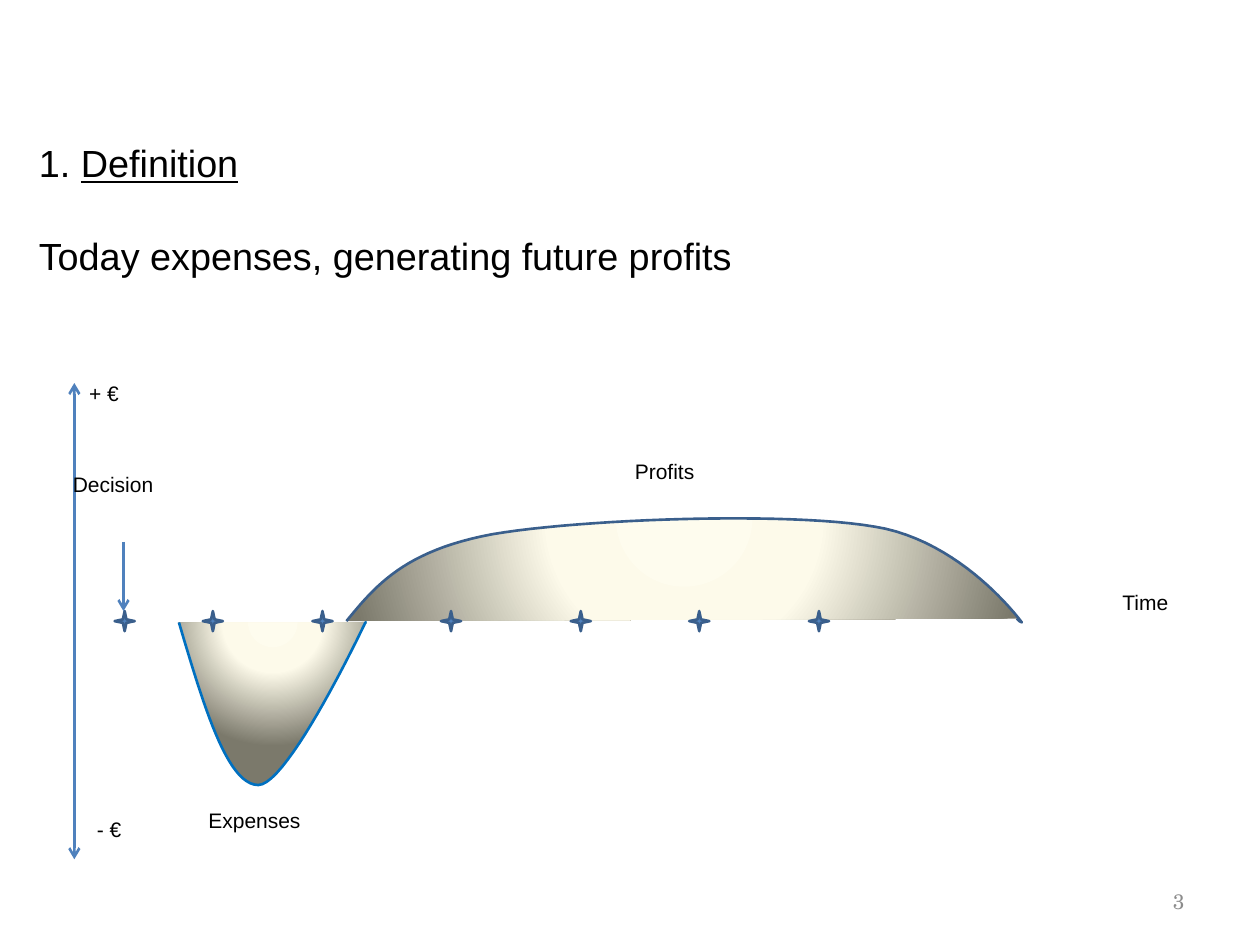
from dataclasses import dataclass

from pptx import Presentation, oxml
from pptx import util as u
from pptx.dml.color import RGBColor
from pptx.enum import shapes, text
from pptx.oxml.ns import nsdecls, qn

Point = tuple[float, float]


@dataclass(frozen=True)
class Theme:
    font: str = "Arial"
    number_font: str = "TeX Gyre Schola"
    ink: str = "000000"
    muted: str = "8C8C8C"
    accent: str = "4F81BD"
    edge: str = "3A5F8C"
    expense_edge: str = "0070C0"
    gradient: tuple = ((0, "FEFCEE"), (40, "FDFAEA"), (100, "7B796B"))
    title_size: float = 21.6
    label_size: float = 12
    line_width: float = 1.5


@dataclass(frozen=True)
class Label:
    words: str
    left: float
    top: float
    width: float
    align: text.PP_ALIGN = text.PP_ALIGN.LEFT


@dataclass(frozen=True)
class Area:
    start: Point
    curves: tuple
    tail: tuple
    edge: str


THEME = Theme()
TIMELINE_Y = 4.93
STAR_SIZE = 0.16
STAR_CENTERS = (0.99, 1.69, 2.56, 3.58, 4.61, 5.55, 6.5)
CURVE_STEPS = 24

LABELS = (
    Label("Time", 8.81, 4.63, 0.57),
    Label("Decision", 0.48, 3.69, 0.84),
    Label("+ €", 0.61, 2.97, 0.44),
    Label("- €", 0.67, 6.43, 0.4),
    Label("Expenses", 1.55, 6.36, 0.94, text.PP_ALIGN.CENTER),
    Label("Profits", 4.94, 3.59, 0.68),
)

EXPENSES = Area(
    (1.42, 4.94),
    (
        ((1.61, 5.58), (1.8, 6.23), (2.05, 6.23)),
        ((2.29, 6.23), (2.9, 4.94), (2.9, 4.94)),
    ),
    ((2.91, 4.94),),
    THEME.expense_edge,
)
PROFITS = Area(
    (2.75, 4.93),
    (
        ((2.98, 4.65), (3.21, 4.37), (3.91, 4.24)),
        ((4.61, 4.12), (6.24, 4.06), (6.94, 4.18)),
        ((7.64, 4.29), (8.11, 4.94), (8.11, 4.94)),
    ),
    ((8.09, 4.93), (8.07, 4.91)),
    THEME.edge,
)


def style_font(font, size: float, color: str = THEME.ink, name: str = THEME.font) -> None:
    font.name = name
    font.size = u.Pt(size)
    font.color.rgb = RGBColor.from_string(color)


def style_line(line, color: str) -> None:
    line.color.rgb = RGBColor.from_string(color)
    line.width = u.Pt(THEME.line_width)


def add_text(s, left: float, top: float, width: float, height: float, words: str):
    sp = s.shapes.add_textbox(*map(u.Inches, (left, top, width, height)))
    sp.text_frame.text = words
    return sp.text_frame


def add_title(s) -> None:
    tf = add_text(s, 0.21, 1.04, 9.29, 1, "1. ")
    tf.word_wrap = True
    tf.margin_top = u.Inches(0.07)
    r = tf.paragraphs[0].add_run()
    r.text = "Definition"
    r.font.underline = True
    p = tf.add_paragraph()
    p.text = "Today expenses, generating future profits"
    p.space_before = u.Pt(27)
    for p in tf.paragraphs:
        for r in p.runs:
            style_font(r.font, THEME.title_size)


def add_page_number(s) -> None:
    tf = add_text(s, 9.17, 6.95, 0.33, 0.4, "3")
    tf.word_wrap = True
    tf.vertical_anchor = text.MSO_ANCHOR.MIDDLE
    p = tf.paragraphs[0]
    p.alignment = text.PP_ALIGN.RIGHT
    style_font(p.runs[0].font, THEME.label_size, THEME.muted, THEME.number_font)


def add_label(s, label: Label) -> None:
    tf = add_text(s, label.left, label.top, label.width, 0.3, label.words)
    tf.word_wrap = False
    tf.auto_size = text.MSO_AUTO_SIZE.SHAPE_TO_FIT_TEXT
    p = tf.paragraphs[0]
    p.alignment = label.align
    style_font(p.runs[0].font, THEME.label_size)


def bezier(a: Point, b: Point, c: Point, d: Point, t: float) -> Point:
    weights = ((1 - t) ** 3, 3 * t * (1 - t) ** 2, 3 * t**2 * (1 - t), t**3)
    return tuple(sum(w * v for w, v in zip(weights, axis)) for axis in zip(a, b, c, d))


def outline(area: Area) -> list[Point]:
    points = [area.start]
    for curve in area.curves:
        start = points[-1]
        points += [bezier(start, *curve, i / CURVE_STEPS) for i in range(1, CURVE_STEPS + 1)]
    return points + list(area.tail)


def add_area(s, area: Area) -> None:
    first, *rest = [(u.Inches(x), u.Inches(y)) for x, y in outline(area)]
    builder = s.shapes.build_freeform(*first)
    builder.add_line_segments(rest, close=False)
    sp = builder.convert_to_shape()
    sp.shadow.inherit = False
    style_line(sp.line, area.edge)
    sp.fill.background()
    stops = "".join(
        f'<a:gs pos="{pos * 1000}"><a:srgbClr val="{color}"/></a:gs>'
        for pos, color in THEME.gradient
    )
    gradient = oxml.parse_xml(
        f'<a:gradFill {nsdecls("a")} rotWithShape="1"><a:gsLst>{stops}</a:gsLst>'
        '<a:path path="circle"><a:fillToRect l="50000" t="-80000" r="50000" b="180000"/>'
        "</a:path></a:gradFill>"
    )
    props = sp._element.spPr
    props.replace(props.find(qn("a:noFill")), gradient)


def add_star(s, center: float) -> None:
    left, top = center - STAR_SIZE / 2, TIMELINE_Y - STAR_SIZE / 2
    sp = s.shapes.add_shape(
        shapes.MSO_SHAPE.STAR_4_POINT, *map(u.Inches, (left, top, STAR_SIZE, STAR_SIZE))
    )
    sp.shadow.inherit = False
    sp.fill.solid()
    sp.fill.fore_color.rgb = RGBColor.from_string(THEME.accent)
    style_line(sp.line, THEME.edge)


def add_arrow(s, x: float, top: float, bottom: float, ends: tuple[str, ...]) -> None:
    sp = s.shapes.add_connector(
        shapes.MSO_CONNECTOR.STRAIGHT, *map(u.Inches, (x, top, x, bottom))
    )
    style_line(sp.line, THEME.accent)
    ln = sp.line._get_or_add_ln()
    for end in ends:
        ln.append(oxml.parse_xml(f'<a:{end} {nsdecls("a")} type="arrow"/>'))
    sp._element.spPr.append(oxml.parse_xml(f'<a:effectLst {nsdecls("a")}/>'))


def main() -> None:
    prs = Presentation()
    prs.slide_width, prs.slide_height = u.Inches(10), u.Inches(7.5)
    s = prs.slides.add_slide(prs.slide_layouts[6])
    add_title(s)
    add_page_number(s)
    for area in (EXPENSES, PROFITS):
        add_area(s, area)
    for center in STAR_CENTERS:
        add_star(s, center)
    add_arrow(s, 0.59, 3.04, 6.82, ("headEnd", "tailEnd"))
    add_arrow(s, 0.98, 4.3, 4.85, ("tailEnd",))
    for label in LABELS:
        add_label(s, label)
    prs.save("out.pptx")


if __name__ == "__main__":
    main()
